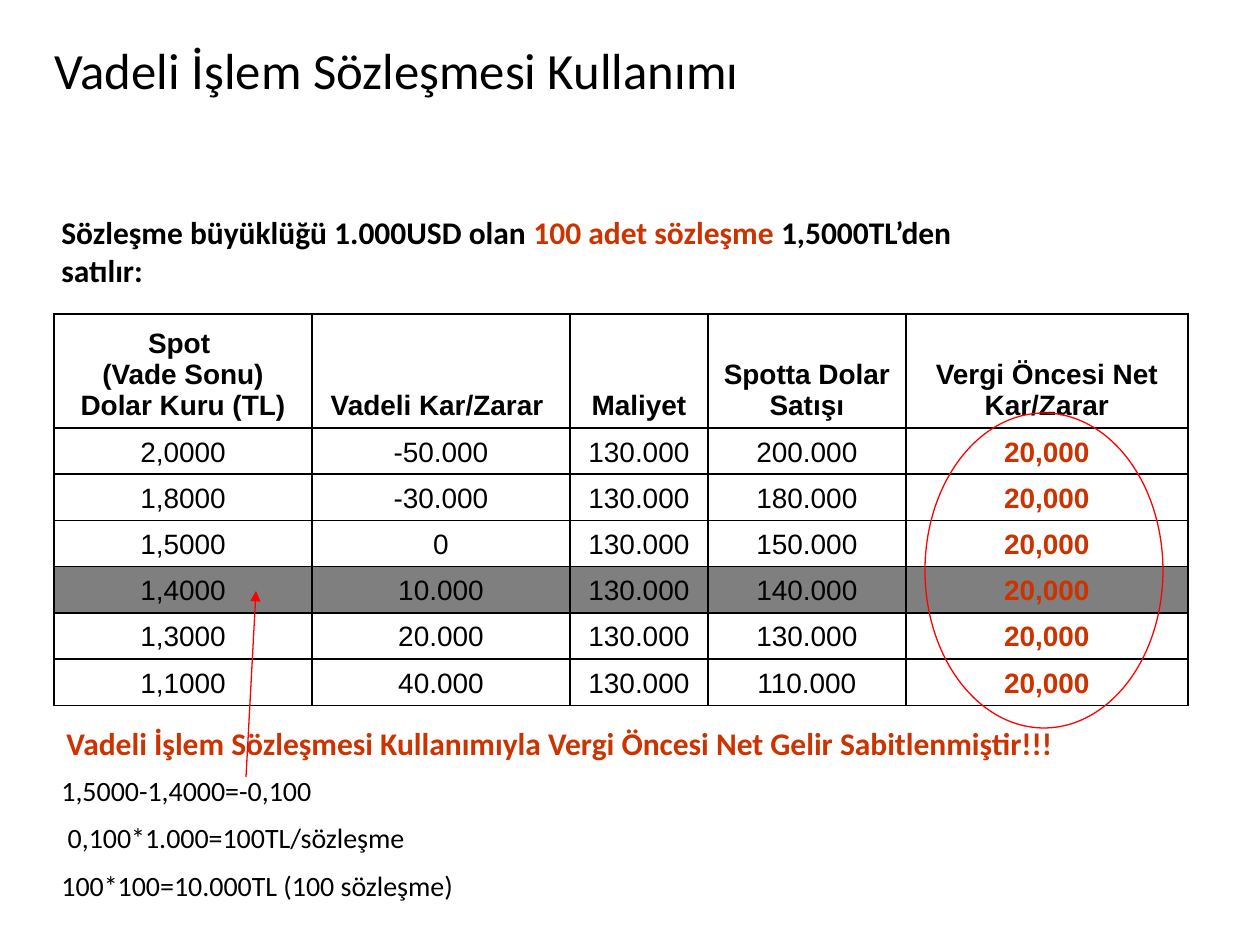
from lxml import etree
from pptx import Presentation
from pptx.dml.color import RGBColor
from pptx.enum.shapes import MSO_CONNECTOR, MSO_SHAPE
from pptx.enum.text import MSO_ANCHOR, MSO_AUTO_SIZE, PP_ALIGN
from pptx.oxml.ns import qn
from pptx.util import Emu, Pt

CENTER = PP_ALIGN.CENTER
LEFT = PP_ALIGN.LEFT
TOP = MSO_ANCHOR.TOP
BOTTOM = MSO_ANCHOR.BOTTOM
NO_AUTOFIT = MSO_AUTO_SIZE.NONE
ELLIPSE = MSO_SHAPE.OVAL
STRAIGHT = MSO_CONNECTOR.STRAIGHT

BLACK = "000000"
ORANGE = "CC3300"
RED = "FF0000"
GRAY = "7F7F7F"
TITLE_ONLY = 5


def px(length):
    return Emu(round(length * 914400 / 126))


def rgb(color):
    return RGBColor.from_string(color)


class SlideBuilder:
    text_font = "Calibri"
    table_font = "Arial"
    line_width = Pt(0.75)

    def __init__(self, presentation):
        self.slide = presentation.slides.add_slide(presentation.slide_layouts[TITLE_ONLY])
        self.shapes = self.slide.shapes

    def format_run(self, run, size, color=BLACK, bold=False, font=text_font):
        run.font.name = font
        run.font.size = Pt(size)
        run.font.bold = bold
        run.font.color.rgb = rgb(color)

    def title(self, text, left, top, width, height):
        title = self.shapes.title
        title.left, title.top, title.width, title.height = map(px, (left, top, width, height))
        frame = title.text_frame
        frame.text = text
        frame.auto_size = NO_AUTOFIT
        frame.vertical_anchor = TOP
        frame.margin_top = px(10)
        frame.paragraphs[0].alignment = CENTER
        self.format_run(frame.paragraphs[0].runs[0], 29)

    def text(self, paragraphs, left, top, width, height, size, bold=False):
        """Each paragraph is a list of (text, color) runs."""
        box = self.shapes.add_textbox(*map(px, (left, top, width, height)))
        frame = box.text_frame
        frame.word_wrap = True
        for index, runs in enumerate(paragraphs):
            paragraph = frame.add_paragraph() if index else frame.paragraphs[0]
            paragraph.alignment = LEFT
            if index:
                paragraph.space_before = Pt(size / 2)
            for content, color in runs:
                run = paragraph.add_run()
                run.text = content
                self.format_run(run, size, color, bold)

    def cell_borders(self, cell):
        properties = cell._tc.get_or_add_tcPr()
        for side in ("a:lnL", "a:lnR", "a:lnT", "a:lnB"):
            border = etree.SubElement(properties, qn(side), w=str(Pt(1)))
            fill = etree.SubElement(border, qn("a:solidFill"))
            etree.SubElement(fill, qn("a:srgbClr"), val=BLACK)

    def table(self, rows, left, top, widths, heights, shaded_row):
        """The first row is the header; the last column is emphasised."""
        frame = self.shapes.add_table(
            len(rows), len(widths), *map(px, (left, top, sum(widths), sum(heights))))
        table = frame.table
        table.first_row = False
        table.horz_banding = False
        for column, width in zip(table.columns, widths):
            column.width = px(width)
        for row, height in zip(table.rows, heights):
            row.height = px(height)
        for row_index, values in enumerate(rows):
            for column_index, value in enumerate(values):
                cell = table.cell(row_index, column_index)
                self.cell_borders(cell)
                if row_index == shaded_row:
                    cell.fill.solid()
                    cell.fill.fore_color.rgb = rgb(GRAY)
                else:
                    cell.fill.background()
                cell.vertical_anchor = BOTTOM
                cell.text_frame.text = value
                is_header = row_index == 0
                is_result = not is_header and column_index == len(values) - 1
                for paragraph in cell.text_frame.paragraphs:
                    paragraph.alignment = CENTER
                    self.format_run(paragraph.runs[0], 16, ORANGE if is_result else BLACK,
                                    is_header or is_result, self.table_font)

    def arrow(self, start, end, color):
        connector = self.shapes.add_connector(STRAIGHT, *map(px, (*start, *end)))
        connector.line.color.rgb = rgb(color)
        connector.line.width = self.line_width
        properties = connector._element.spPr
        etree.SubElement(properties.find(qn("a:ln")), qn("a:tailEnd"), type="triangle")
        etree.SubElement(properties, qn("a:effectLst"))

    def ellipse(self, left, top, width, height, color):
        shape = self.shapes.add_shape(ELLIPSE, *map(px, (left, top, width, height)))
        shape.shadow.inherit = False
        shape.fill.background()
        shape.line.color.rgb = rgb(color)
        shape.line.width = self.line_width


def main():
    presentation = Presentation()
    presentation.slide_width = px(1260)
    presentation.slide_height = px(945)
    builder = SlideBuilder(presentation)

    builder.title("Vadeli İşlem Sözleşmesi Kullanımı", -59, 29, 912, 108)
    builder.text([[("Sözleşme büyüklüğü 1.000USD olan ", BLACK),
                   ("100 adet sözleşme", ORANGE),
                   (" 1,5000TL’den satılır:", BLACK)]],
                 49, 207, 983, 88, 18, bold=True)

    header = ["Spot \n(Vade Sonu) Dolar Kuru (TL)", "Vadeli Kar/Zarar ", "Maliyet",
              "Spotta Dolar Satışı", "Vergi Öncesi Net Kar/Zarar"]
    scenarios = [("2,0000", "-50.000", "200.000"),
                 ("1,8000", "-30.000", "180.000"),
                 ("1,5000", "0", "150.000"),
                 ("1,4000", "10.000", "140.000"),
                 ("1,3000", "20.000", "130.000"),
                 ("1,1000", "40.000", "110.000")]
    rows = [header] + [[rate, futures, "130.000", sale, "20,000"]
                       for rate, futures, sale in scenarios]
    builder.table(rows, 54, 314, widths=[258, 258, 138, 198, 282],
                  heights=[114] + [46] * len(scenarios), shaded_row=4)

    builder.text([[("Vadeli İşlem Sözleşmesi Kullanımıyla Vergi Öncesi Net Gelir "
                    "Sabitlenmiştir!!!", ORANGE)]],
                 54, 718, 1206, 50, 18, bold=True)
    calculations = ["1,5000-1,4000=-0,100", " 0,100*1.000=100TL/sözleşme",
                    "100*100=10.000TL (100 sözleşme)"]
    builder.text([[(line, BLACK)] for line in calculations], 49, 767, 496, 147, 16)

    builder.arrow((246, 777), (256, 591), RED)
    builder.ellipse(925, 413, 238, 315, RED)
    presentation.save("out.pptx")


if __name__ == "__main__":
    main()
